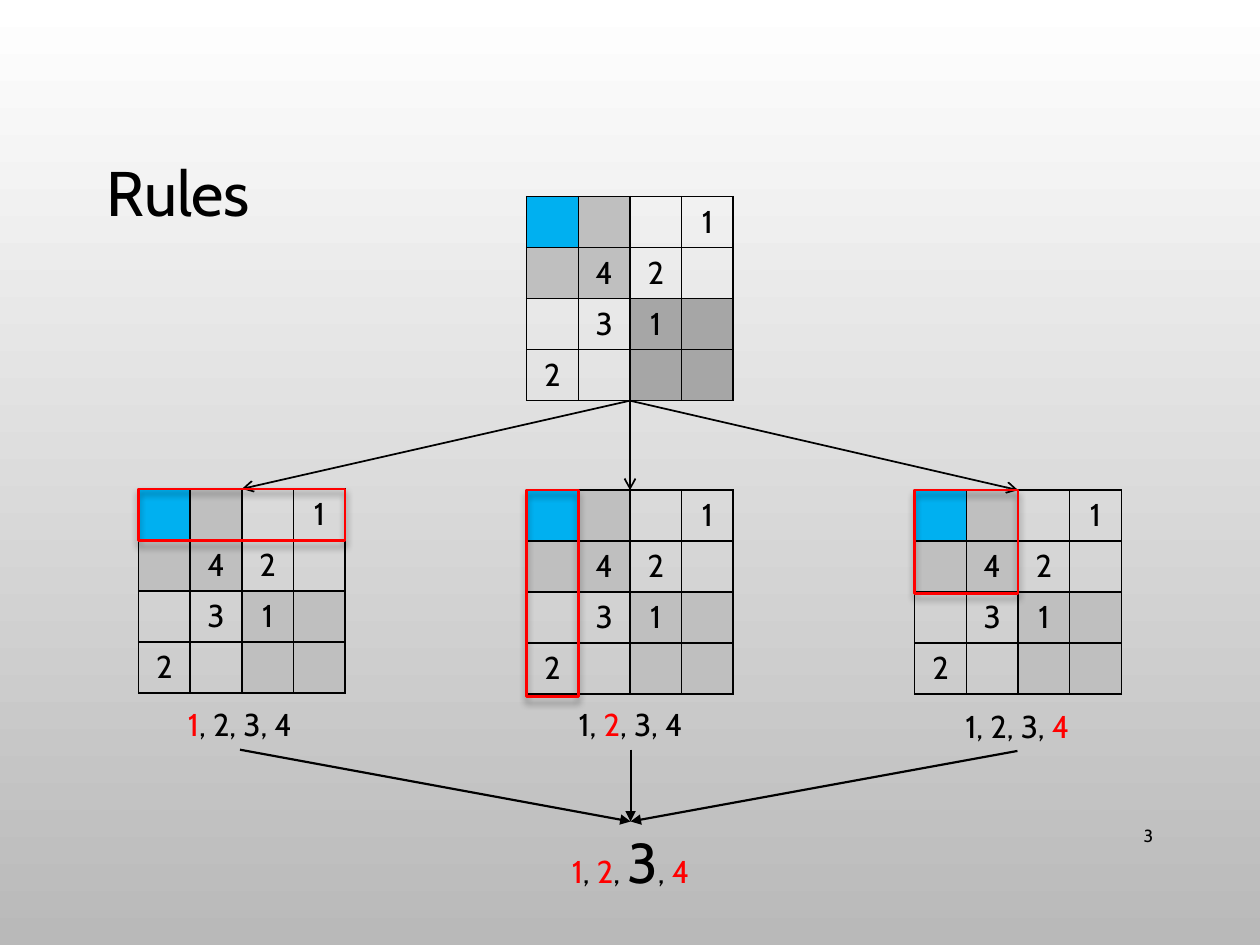
from dataclasses import dataclass

import pptx
import pptx.dml.color
import pptx.enum.shapes
import pptx.enum.text
import pptx.oxml
import pptx.oxml.ns
import pptx.util
from pptx.util import Inches

RGB = pptx.dml.color.RGBColor.from_string
ALIGN = pptx.enum.text.PP_ALIGN
ANCHOR = pptx.enum.text.MSO_ANCHOR
NAMESPACE = pptx.oxml.ns.nsdecls("a")


@dataclass(frozen=True)
class Theme:
    font: str = "Cabin"
    ink: str = "000000"
    accent: str = "FF0000"
    target: str = "00B0F0"
    block: str = "BFBFBF"
    dark_block: str = "A6A6A6"
    top: str = "FFFFFF"
    bottom: str = "B9B9B9"
    title_size: int = 36
    answer_size: int = 32
    body_size: int = 18
    page_size: int = 10


THEME = Theme()
PUZZLE = ["   1", " 42 ", " 31 ", "2   "]
GRID_WIDTH, GRID_HEIGHT = 1.64, 1.62
CELL = GRID_WIDTH / 4


def style_run(run, size, color=THEME.ink):
    run.font.name = THEME.font
    run.font.size = pptx.util.Pt(size)
    run.font.color.rgb = RGB(color)


def paint_background(slide):
    fill = slide.background.fill
    fill.gradient()
    fill.gradient_angle = 270
    for stop, color in zip(fill.gradient_stops, (THEME.top, THEME.bottom)):
        stop.color.rgb = RGB(color)


def add_text(slide, left, top, width, height, parts, align=ALIGN.CENTER,
             anchor=ANCHOR.TOP):
    box = slide.shapes.add_textbox(Inches(left), Inches(top), Inches(width), Inches(height))
    frame = box.text_frame
    frame.word_wrap = True
    frame.vertical_anchor = anchor
    paragraph = frame.paragraphs[0]
    paragraph.alignment = align
    for text, size, color in parts:
        run = paragraph.add_run()
        run.text = text
        style_run(run, size, color)
    return box


def add_candidates(slide, left, top, height, excluded, answer=None):
    parts = []
    for number in "1234":
        if parts:
            parts.append((", ", THEME.body_size, THEME.ink))
        size = THEME.answer_size if number == answer else THEME.body_size
        color = THEME.accent if number in excluded else THEME.ink
        parts.append((number, size, color))
    box = add_text(slide, left, top, 1.69, height, parts)
    box.text_frame.auto_size = pptx.enum.text.MSO_AUTO_SIZE.SHAPE_TO_FIT_TEXT
    return box


def add_borders(cell):
    properties = cell._tc.get_or_add_tcPr()
    for position, side in enumerate(("lnL", "lnR", "lnT", "lnB")):
        border = pptx.oxml.parse_xml(
            f'<a:{side} {NAMESPACE} w="12700"><a:solidFill>'
            f'<a:srgbClr val="{THEME.ink}"/></a:solidFill></a:{side}>')
        properties.insert(position, border)


def add_grid(slide, left, top, last_block):
    table = slide.shapes.add_table(4, 4, Inches(left), Inches(top),
                                   Inches(GRID_WIDTH), Inches(GRID_HEIGHT)).table
    table.first_row = table.horz_banding = False
    fills = {(0, 0): THEME.block, (1, 1): last_block}
    for row, digits in enumerate(PUZZLE):
        for column, digit in enumerate(digits):
            cell = table.cell(row, column)
            cell.margin_top = cell.margin_bottom = 0
            cell.vertical_anchor = ANCHOR.MIDDLE
            color = fills.get((row // 2, column // 2))
            if row == column == 0:
                color = THEME.target
            if color:
                cell.fill.solid()
                cell.fill.fore_color.rgb = RGB(color)
            else:
                cell.fill.background()
            add_borders(cell)
            if digit != " ":
                paragraph = cell.text_frame.paragraphs[0]
                paragraph.text = digit
                paragraph.alignment = ALIGN.CENTER
                style_run(paragraph.runs[0], THEME.body_size)


def add_highlight(slide, left, top, columns, rows):
    frame = slide.shapes.add_shape(
        pptx.enum.shapes.MSO_SHAPE.RECTANGLE, Inches(left), Inches(top),
        Inches(columns * CELL), Inches(rows * CELL))
    frame.fill.background()
    frame.line.color.rgb = RGB(THEME.accent)
    frame.line.width = pptx.util.Pt(1.5)
    frame._element.spPr.append(pptx.oxml.parse_xml(
        f'<a:effectLst {NAMESPACE}><a:outerShdw blurRad="50800" dist="38100" '
        f'dir="5400000" rotWithShape="0"><a:srgbClr val="{THEME.ink}">'
        '<a:alpha val="40000"/></a:srgbClr></a:outerShdw></a:effectLst>'))
    return frame


def add_arrow(slide, start, end, width, head):
    arrow = slide.shapes.add_connector(
        pptx.enum.shapes.MSO_CONNECTOR.STRAIGHT, *map(Inches, start + end))
    arrow.line.color.rgb = RGB(THEME.ink)
    arrow.line.width = pptx.util.Pt(width)
    arrow.line._get_or_add_ln().append(
        pptx.oxml.parse_xml(f'<a:tailEnd {NAMESPACE} type="{head}"/>'))
    arrow._element.spPr.append(pptx.oxml.parse_xml(f"<a:effectLst {NAMESPACE}/>"))
    return arrow


def main():
    presentation = pptx.Presentation()
    presentation.slide_width, presentation.slide_height = Inches(10), Inches(7.5)
    slide = presentation.slides.add_slide(presentation.slide_layouts[6])
    paint_background(slide)

    title = add_text(slide, 0.75, 0.68, 8.5, 1.75,
                     [("Rules", THEME.title_size, THEME.ink)], ALIGN.LEFT, ANCHOR.MIDDLE)
    title.text_frame.paragraphs[0].line_spacing = 0.9

    puzzle_left, puzzle_top = 4.18, 1.56
    add_grid(slide, puzzle_left, puzzle_top, THEME.dark_block)
    puzzle_foot = (5, puzzle_top + GRID_HEIGHT)
    answer = add_candidates(slide, 4.16, 6.52, 0.64, excluded="124", answer="3")

    rules = [
        (1.1, 3.88, (4, 1), "1", (1.06, 5.55)),
        (4.18, 3.89, (1, 4), "2", (4.16, 5.55)),
        (7.26, 3.89, (2, 2), "4", (7.23, 5.56)),
    ]
    for left, top, span, excluded, candidates_at in rules:
        add_grid(slide, left, top, THEME.block)
        grid_head = (left + GRID_WIDTH / 2, top)
        rule_arrow = add_arrow(slide, puzzle_foot, grid_head, 1, "arrow")
        highlight = add_highlight(slide, left, top, *span)
        if span[0] == 4:
            rule_arrow.end_connect(highlight, 0)

        candidates = add_candidates(slide, *candidates_at, 0.4, excluded)
        answer_arrow = add_arrow(slide, (grid_head[0], 5.95), (5, 6.52), 1.25, "triangle")
        answer_arrow.begin_connect(candidates, 2)
        answer_arrow.end_connect(answer, 0)

    add_text(slide, 8.62, 6.43, 0.63, 0.4, [("3", THEME.page_size, THEME.ink)],
             ALIGN.RIGHT, ANCHOR.MIDDLE)
    presentation.save("out.pptx")


if __name__ == "__main__":
    main()
